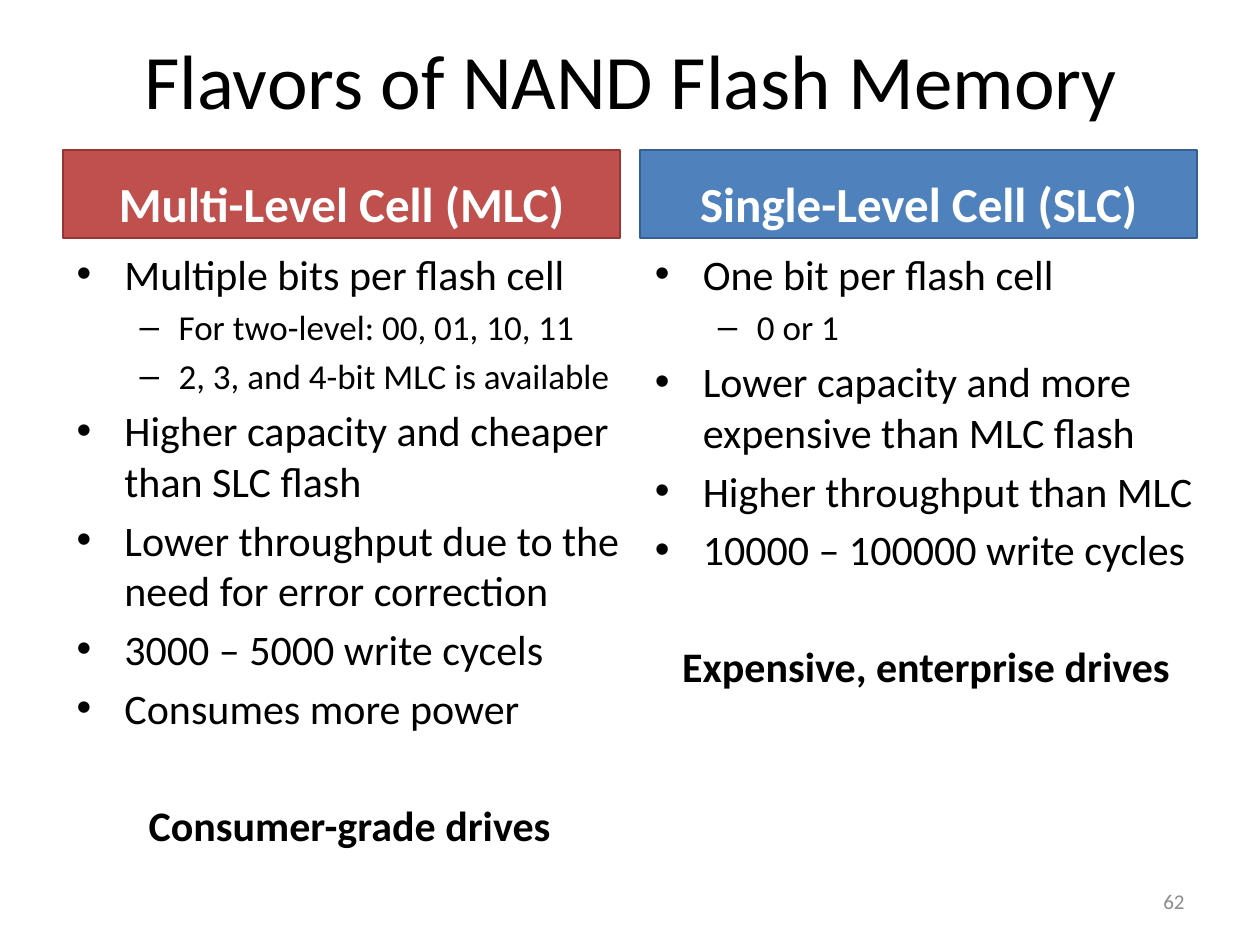
from lxml.etree import SubElement
from pptx import Presentation
from pptx.dml.color import RGBColor
from pptx.enum.shapes import MSO_SHAPE
from pptx.enum.text import MSO_ANCHOR, PP_ALIGN
from pptx.oxml.ns import qn
from pptx.util import Inches, Pt

# Per outline level: text size, bullet, text indent, hanging indent, space before
LEVELS = [
    (24, "•", 0.38, 0.38, 4.8),
    (20, "–", 0.81, 0.31, 4),
]

MLC_POINTS = [
    (0, "Multiple bits per flash cell"),
    (1, "For two-level: 00, 01, 10, 11"),
    (1, "2, 3, and 4-bit MLC is available"),
    (0, "Higher capacity and cheaper than SLC flash"),
    (0, "Lower throughput due to the need for error correction"),
    (0, "3000 – 5000 write cycels"),
    (0, "Consumes more power"),
]
SLC_POINTS = [
    (0, "One bit per flash cell"),
    (1, "0 or 1"),
    (0, "Lower capacity and more expensive than MLC flash"),
    (0, "Higher throughput than MLC"),
    (0, "10000 – 100000 write cycles"),
]


def color(value):
    return RGBColor.from_string(value)


class SlideBuilder:
    font = "Calibri"
    text_color = "000000"
    closing_gap = 38

    def __init__(self, page):
        self.page = page

    def format(self, para, size, text_color=None, bold=False, align=PP_ALIGN.LEFT):
        para.alignment = align
        para.font.name = self.font
        para.font.size = Pt(size)
        para.font.bold = bold
        para.font.color.rgb = color(text_color or self.text_color)

    def title(self, text, left, top, width, height):
        title = self.page.shapes.title
        title.left, title.top = Inches(left), Inches(top)
        title.width, title.height = Inches(width), Inches(height)
        title.text_frame.text = text
        title.text_frame.vertical_anchor = MSO_ANCHOR.MIDDLE
        self.format(title.text_frame.paragraphs[0], 44, align=PP_ALIGN.CENTER)

    def text_box(self, left, top, width, height):
        box = self.page.shapes.add_textbox(
            Inches(left), Inches(top), Inches(width), Inches(height))
        box.text_frame.word_wrap = True
        return box.text_frame

    def header(self, text, left, fill, line):
        box = self.page.shapes.add_shape(
            MSO_SHAPE.RECTANGLE, Inches(left), Inches(1.19), Inches(4.42), Inches(0.7))
        box.shadow.inherit = False
        box.fill.solid()
        box.fill.fore_color.rgb = color(fill)
        box.line.color.rgb = color(line)
        box.line.width = Pt(0.75)
        box.text_frame.text = text
        box.text_frame.vertical_anchor = MSO_ANCHOR.BOTTOM
        self.format(box.text_frame.paragraphs[0], 28, "FFFFFF", True, PP_ALIGN.CENTER)

    def bullet(self, para, level):
        size, mark, indent, hanging, space = LEVELS[level]
        para.level = level
        para.space_before = Pt(space)
        properties = para._p.get_or_add_pPr()
        properties.set("marL", str(Inches(indent)))
        properties.set("indent", str(-Inches(hanging)))
        SubElement(properties, qn("a:buFont"), typeface="Arial")
        SubElement(properties, qn("a:buChar"), char=mark)
        self.format(para, size)

    def outline(self, points, closing, left, width, height):
        """Bulleted points followed by a centred bold closing line."""
        frame = self.text_box(left, 1.92, width, height)
        for index, (level, text) in enumerate(points):
            para = frame.add_paragraph() if index else frame.paragraphs[0]
            para.text = text
            self.bullet(para, level)
        para = frame.add_paragraph()
        para.text = closing
        para.space_before = Pt(self.closing_gap)
        self.format(para, LEVELS[0][0], bold=True, align=PP_ALIGN.CENTER)

    def page_number(self, text):
        frame = self.text_box(7.17, 6.95, 2.33, 0.4)
        frame.text = text
        frame.vertical_anchor = MSO_ANCHOR.MIDDLE
        self.format(frame.paragraphs[0], 12, "8C8C8C", align=PP_ALIGN.RIGHT)


def main():
    deck = Presentation()
    deck.slide_width, deck.slide_height = Inches(10), Inches(7.5)
    builder = SlideBuilder(deck.slides.add_slide(deck.slide_layouts[5]))
    builder.title("Flavors of NAND Flash Memory", 0.51, 0, 9, 1.25)
    builder.header("Multi-Level Cell (MLC)", 0.5, "C0504D", "953735")
    builder.outline(MLC_POINTS, "Consumer-grade drives", 0.51, 4.53, 5.12)
    builder.header("Single-Level Cell (SLC)", 5.08, "4F81BD", "376092")
    builder.outline(SLC_POINTS, "Expensive, enterprise drives", 5.1, 4.5, 4.89)
    builder.page_number("62")
    deck.save("out.pptx")


if __name__ == "__main__":
    main()
